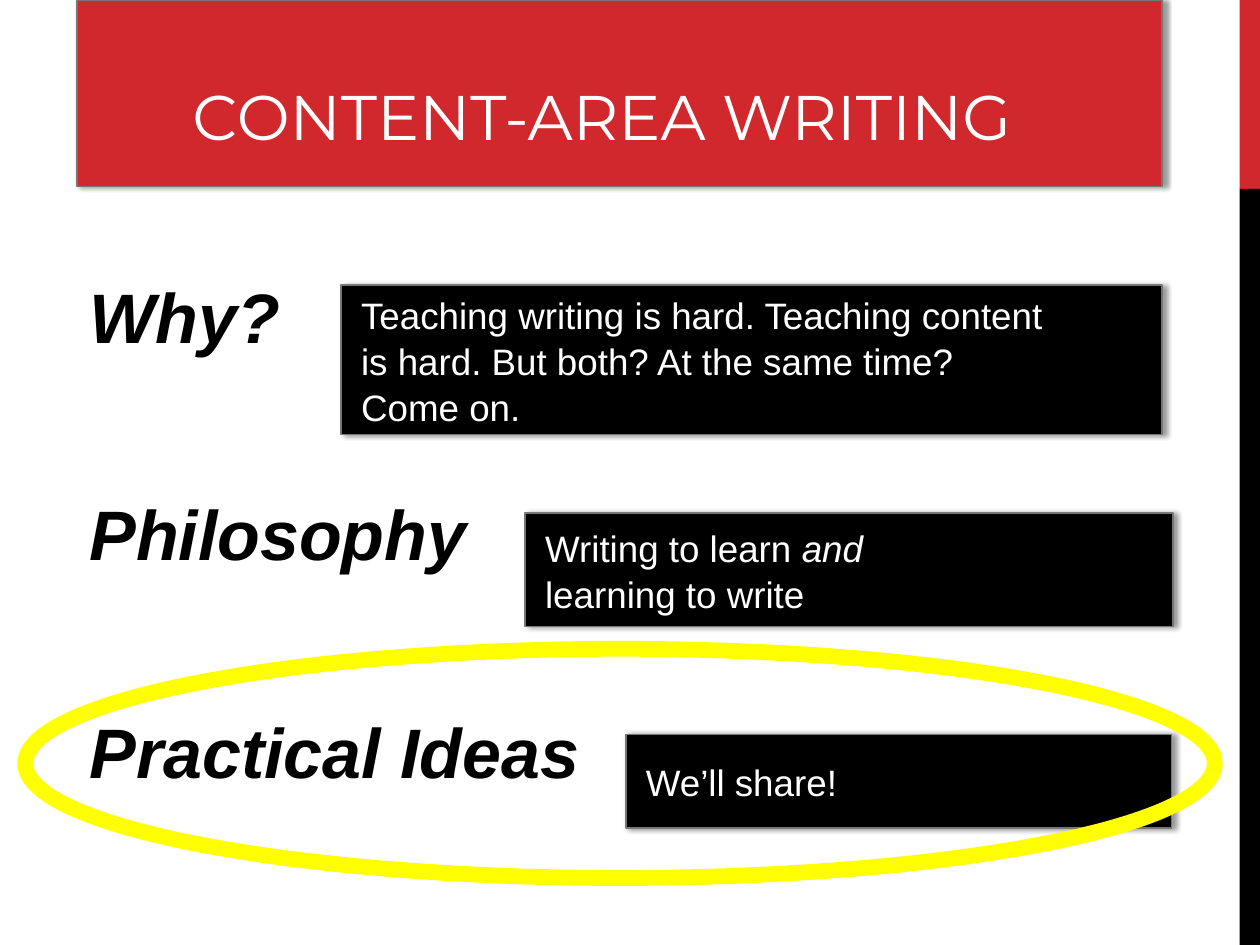
"""Builds the content-area writing slide: three headings, their notes and a highlight."""
from dataclasses import dataclass

from lxml.etree import SubElement
from pptx import Presentation
from pptx.dml.color import RGBColor
from pptx.enum.shapes import MSO_SHAPE as Shape
from pptx.enum.text import MSO_ANCHOR as Anchor, MSO_AUTO_SIZE as AutoSize, PP_ALIGN as Align
from pptx.oxml.ns import qn
from pptx.util import Cm, Pt


@dataclass(frozen=True)
class Theme:
    red: RGBColor = RGBColor(0xD1, 0x28, 0x2E)
    black: RGBColor = RGBColor(0, 0, 0)
    white: RGBColor = RGBColor(255, 255, 255)
    outline: RGBColor = RGBColor(0x77, 0x77, 0x77)
    highlight: RGBColor = RGBColor(255, 255, 0)
    title_font: str = "Montserrat"
    body_font: str = "Arial"
    title_size: int = 36
    heading_size: int = 40
    note_size: int = 21


THEME = Theme()
HEADINGS = ["Why?", "Philosophy", "Practical Ideas"]
NOTES = [
    ((6.88, 5.74, 16.54, 3.02), [
        [("Teaching writing is hard. Teaching content", False)],
        [("is hard. But both? At the same time?", False)],
        [("Come on.", False)],
    ]),
    ((10.59, 10.34, 13.06, 2.29), [
        [("Writing to learn ", False), ("and", True)],
        [("learning to write", False)],
    ]),
    ((12.62, 14.81, 11, 1.88), [[("We’ll share!", False)]]),
]


def place(shape, box):
    shape.left, shape.top, shape.width, shape.height = map(Cm, box)


def add_run(paragraph, text, font_name, size, color, bold=False, italic=False):
    run = paragraph.add_run()
    run.text = text
    font = run.font
    font.name, font.size, font.bold, font.italic = font_name, Pt(size), bold, italic
    font.color.rgb = color


def add_block(slide, box, color):
    shape = slide.shapes.add_shape(Shape.RECTANGLE, *map(Cm, box))
    shape.shadow.inherit = False
    shape.fill.solid()
    shape.fill.fore_color.rgb = color
    shape.line.fill.background()
    return shape


def add_panel(slide, box, color):
    shape = add_block(slide, box, color)
    shape.line.color.rgb = THEME.outline
    shape.line.width = Pt(1)
    effects = shape.element.spPr.find(qn("a:effectLst"))
    shadow = SubElement(effects, qn("a:outerShdw"), blurRad=str(Pt(3.1)),
                        dist=str(Pt(1.8)), dir="0", rotWithShape="0")
    shadow_color = SubElement(shadow, qn("a:srgbClr"), val=str(THEME.black))
    SubElement(shadow_color, qn("a:alpha"), val="40000")
    return shape


def add_note(slide, box, lines):
    frame = add_panel(slide, box, THEME.black).text_frame
    frame.word_wrap = True
    frame.vertical_anchor = Anchor.MIDDLE
    for index, line in enumerate(lines):
        paragraph = frame.add_paragraph() if index else frame.paragraphs[0]
        paragraph.alignment = Align.LEFT
        paragraph.line_spacing = 1.04
        paragraph._p.get_or_add_pPr().set("marL", str(Cm(0.15)))
        for text, italic in line:
            add_run(paragraph, text, THEME.body_font, THEME.note_size, THEME.white,
                    italic=italic)


def fill_title(title, text):
    place(title, (1.55, 1.32, 21.16, 1.9))
    frame = title.text_frame
    frame.auto_size = AutoSize.NONE
    frame.vertical_anchor = Anchor.BOTTOM
    paragraph = frame.paragraphs[0]
    paragraph.alignment = Align.CENTER
    add_run(paragraph, text, THEME.title_font, THEME.title_size, THEME.white)


def fill_headings(body, headings):
    place(body, (1.55, 5.36, 21.16, 12.14))
    frame = body.text_frame
    frame.auto_size = AutoSize.NONE
    for index, heading in enumerate(headings):
        paragraph = frame.add_paragraph() if index else frame.paragraphs[0]
        paragraph.line_spacing = Pt(49)
        paragraph.space_before = Pt(75 if index else 0)
        properties = paragraph._p.get_or_add_pPr()
        properties.set("marL", "0")
        properties.set("indent", "0")
        SubElement(properties, qn("a:buNone"))
        add_run(paragraph, heading, THEME.body_font, THEME.heading_size, THEME.black,
                bold=True, italic=True)


def add_highlight(slide, box):
    ring = slide.shapes.add_shape(Shape.OVAL, *map(Cm, box))
    ring.shadow.inherit = False
    ring.fill.background()
    ring.line.color.rgb = THEME.highlight
    ring.line.width = Pt(9)


def main():
    presentation = Presentation()
    presentation.slide_width, presentation.slide_height = Cm(25.4), Cm(19.05)
    slide = presentation.slides.add_slide(presentation.slide_layouts[1])
    title, body = slide.placeholders
    backdrop = [
        add_block(slide, (24.99, 0, 0.41, 3.81), THEME.red),
        add_block(slide, (24.99, 3.81, 0.41, 15.24), THEME.black),
        add_panel(slide, (1.55, 0, 21.87, 3.76), THEME.red),
    ]
    for shape in backdrop:
        title.element.addprevious(shape.element)
    fill_title(title, "CONTENT-AREA WRITING")
    fill_headings(body, HEADINGS)
    for box, lines in NOTES:
        add_note(slide, box, lines)
    add_highlight(slide, (0.51, 13.08, 23.98, 4.62))
    presentation.save("out.pptx")


if __name__ == "__main__":
    main()
